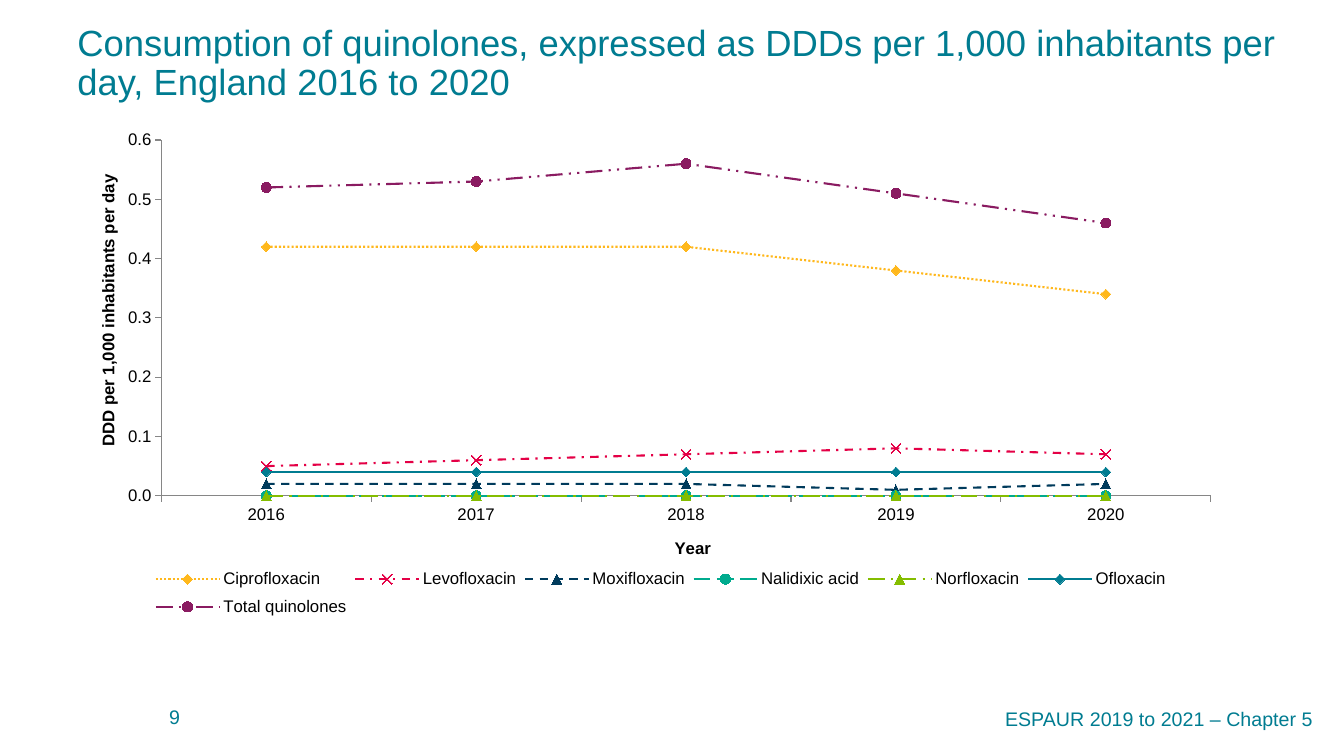
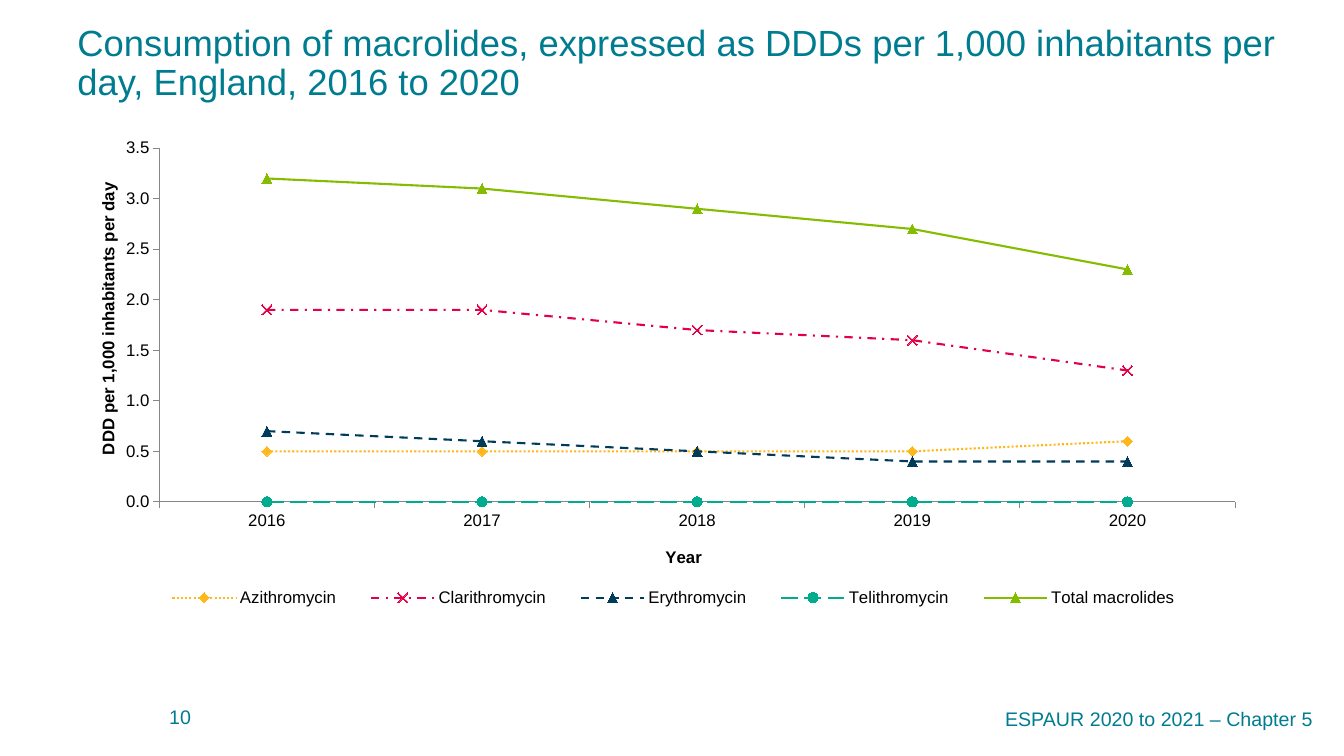
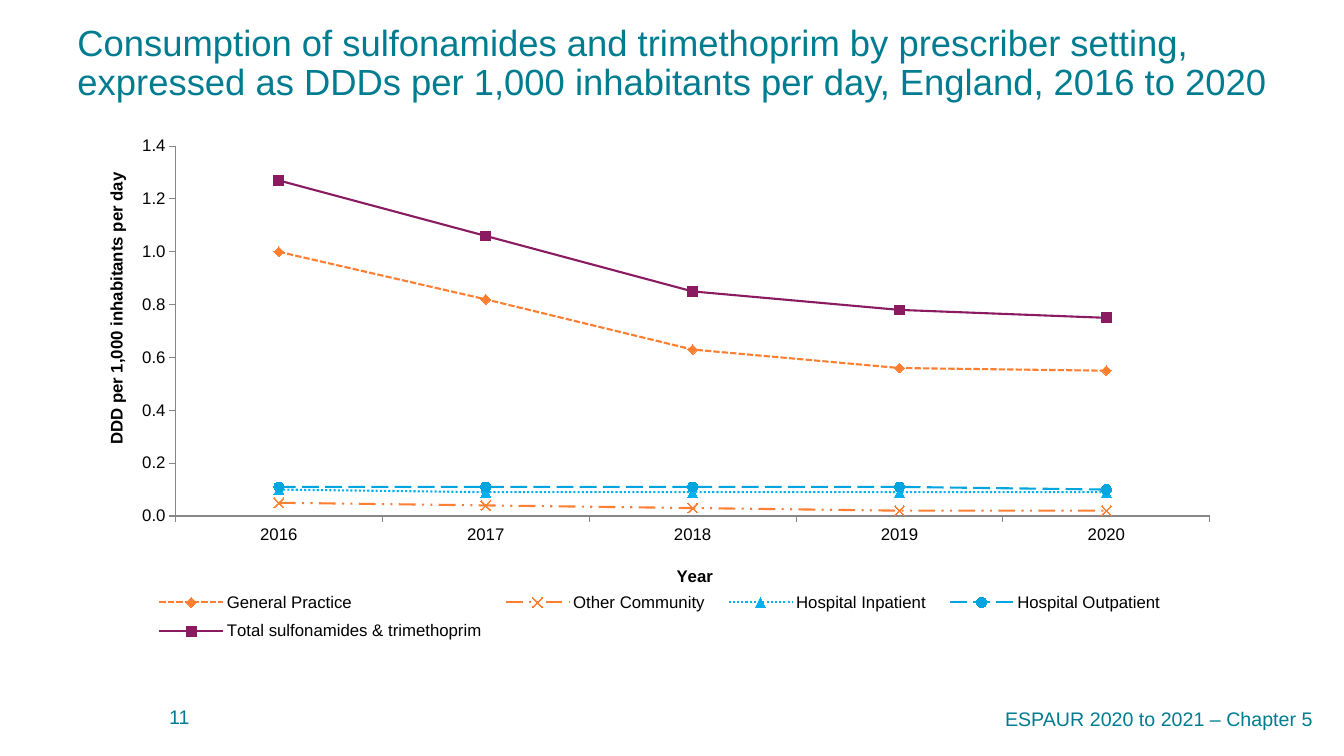
from dataclasses import dataclass

from lxml import etree
from pptx import Presentation
from pptx.chart.data import CategoryChartData
from pptx.dml.color import RGBColor
from pptx.enum.chart import XL_CHART_TYPE, XL_LEGEND_POSITION, XL_MARKER_STYLE, XL_TICK_MARK
from pptx.enum.dml import MSO_LINE
from pptx.enum.text import MSO_ANCHOR, PP_ALIGN
from pptx.oxml.ns import qn
from pptx.util import Pt

PX = 9144
LINE_MARKERS = XL_CHART_TYPE.LINE_MARKERS
BOTTOM = XL_LEGEND_POSITION.BOTTOM
TICK_OUT, TICK_NONE = XL_TICK_MARK.OUTSIDE, XL_TICK_MARK.NONE
TOP, MIDDLE = MSO_ANCHOR.TOP, MSO_ANCHOR.MIDDLE
LEFT, RIGHT = PP_ALIGN.LEFT, PP_ALIGN.RIGHT
DIAMOND, CROSS = XL_MARKER_STYLE.DIAMOND, XL_MARKER_STYLE.X
TRIANGLE, CIRCLE = XL_MARKER_STYLE.TRIANGLE, XL_MARKER_STYLE.CIRCLE
SQUARE = XL_MARKER_STYLE.SQUARE
SOLID, DOTS, SHORT_DASH = MSO_LINE.SOLID, MSO_LINE.ROUND_DOT, MSO_LINE.SQUARE_DOT
DASH, DASH_DOT = MSO_LINE.DASH, MSO_LINE.DASH_DOT
LONG_DASH, LONG_DASH_DOT = MSO_LINE.LONG_DASH, MSO_LINE.LONG_DASH_DOT
LONG_DASH_DOT_DOT = MSO_LINE.DASH_DOT_DOT


@dataclass(frozen=True)
class Theme:
    """Colours, font and sizes shared by the slides."""
    font: str = "Arial"
    teal: str = "007C91"
    black: str = "000000"
    axis: str = "868686"
    yellow: str = "FFB81C"
    red: str = "E40046"
    navy: str = "003B5C"
    green: str = "00AB8E"
    lime: str = "84BD00"
    plum: str = "8A1B61"
    orange: str = "FF7F32"
    sky: str = "00B0F0"
    blue: str = "00A5DF"
    title_size: int = 26
    footer_size: int = 14
    chart_size: int = 12
    series_width: float = 1.5
    axis_width: float = 0.75
    marker_size: int = 7


T = Theme()
YEARS = ["2016", "2017", "2018", "2019", "2020"]
TITLE_BOX = (67, 20, 1217, 106)
FOOTER_BOX = (14, 682, 1298, 62)
NUMBER_BOX = (89, 691, 1094, 40)
NUMBER_INDENT = 69

SLIDES = [
    dict(
        number=9,
        title="Consumption of quinolones, expressed as DDDs per 1,000 inhabitants per day, England 2016 to 2020",
        footer="ESPAUR 2019 to 2021 – Chapter 5",
        box=(89, 121, 1131, 506),
        plot=(71, 18, 1041, 353),
        legend=(57, 435, 1019, 65),
        year_at=(577, 410),
        ddd_at=(5, 49),
        scale=(0.6, 0.1),
        series=[
            ("Ciprofloxacin", (0.42, 0.42, 0.42, 0.38, 0.34), T.yellow, DOTS, DIAMOND),
            ("Levofloxacin", (0.05, 0.06, 0.07, 0.08, 0.07), T.red, DASH_DOT, CROSS),
            ("Moxifloxacin", (0.02, 0.02, 0.02, 0.01, 0.02), T.navy, DASH, TRIANGLE),
            ("Nalidixic acid", (0, 0, 0, 0, 0), T.green, LONG_DASH, CIRCLE),
            ("Norfloxacin", (0, 0, 0, 0, 0), T.lime, LONG_DASH_DOT, TRIANGLE),
            ("Ofloxacin", (0.04, 0.04, 0.04, 0.04, 0.04), T.teal, SOLID, DIAMOND),
            ("Total quinolones", (0.52, 0.53, 0.56, 0.51, 0.46), T.plum, LONG_DASH_DOT_DOT, CIRCLE),
        ],
    ),
    dict(
        number=10,
        title="Consumption of macrolides, expressed as DDDs per 1,000 inhabitants per day, England, 2016 to 2020",
        footer="ESPAUR 2020 to 2021 – Chapter 5",
        box=(89, 129, 1156, 503),
        plot=(69, 18, 1067, 351),
        legend=(53, 444, 1052, 40),
        year_at=(568, 410),
        ddd_at=(5, 49),
        scale=(3.5, 0.5),
        series=[
            ("Azithromycin", (0.5, 0.5, 0.5, 0.5, 0.6), T.yellow, DOTS, DIAMOND),
            ("Clarithromycin", (1.9, 1.9, 1.7, 1.6, 1.3), T.red, DASH_DOT, CROSS),
            ("Erythromycin", (0.7, 0.6, 0.5, 0.4, 0.4), T.navy, DASH, TRIANGLE),
            ("Telithromycin", (0, 0, 0, 0, 0), T.green, LONG_DASH, CIRCLE),
            ("Total macrolides", (3.2, 3.1, 2.9, 2.7, 2.3), T.lime, SOLID, TRIANGLE),
        ],
    ),
    dict(
        number=11,
        title="Consumption of sulfonamides and trimethoprim by prescriber setting, "
              "expressed as DDDs per 1,000 inhabitants per day, England, 2016 to 2020",
        footer="ESPAUR 2020 to 2021 – Chapter 5",
        box=(89, 127, 1130, 527),
        plot=(85, 18, 1026, 367),
        legend=(51, 451, 1029, 68),
        year_at=(579, 431),
        ddd_at=(13, 41),
        scale=(1.4, 0.2),
        series=[
            ("General Practice", (1, 0.82, 0.63, 0.56, 0.55), T.orange, SHORT_DASH, DIAMOND),
            ("Other Community", (0.05, 0.04, 0.03, 0.02, 0.02), T.orange, LONG_DASH_DOT_DOT, CROSS),
            ("Hospital Inpatient", (0.1, 0.09, 0.09, 0.09, 0.09), T.sky, DOTS, TRIANGLE),
            ("Hospital Outpatient", (0.11, 0.11, 0.11, 0.11, 0.1), T.blue, LONG_DASH, CIRCLE),
            ("Total sulfonamides & trimethoprim", (1.27, 1.06, 0.85, 0.78, 0.75), T.plum, SOLID, SQUARE),
        ],
    ),
]


def emu(box):
    """Turn a box in px into EMU."""
    return [v * PX for v in box]


def set_font(font, size, color, bold=False):
    """Apply the theme font with a size and colour."""
    font.name, font.size, font.bold = T.font, Pt(size), bold
    font.color.rgb = RGBColor.from_string(color)


def add_text(slide, box, text, size, anchor=MIDDLE, align=LEFT):
    """Add a one-paragraph teal text box and return its paragraph."""
    tf = slide.shapes.add_textbox(*emu(box)).text_frame
    tf.word_wrap = True
    tf.vertical_anchor = anchor
    tf.text = text
    p = tf.paragraphs[0]
    p.alignment = align
    set_font(p.runs[0].font, size, T.teal)
    return p


def add_title(slide, box, text):
    """Add the slide title."""
    p = add_text(slide, box, text, T.title_size, anchor=TOP)
    p.line_spacing = 0.9


def add_footer(slide, footer_box, number_box, text, number):
    """Add the report name at the right and the slide number at the left."""
    add_text(slide, footer_box, text, T.footer_size, align=RIGHT)
    p = add_text(slide, number_box, str(number), T.footer_size)
    p._p.get_or_add_pPr().set("marL", str(NUMBER_INDENT * PX))


def set_layout(el, index, box, part, inner=False):
    """Fix a chart part at a px place relative to the chart box."""
    for old in el.findall(qn("c:layout")):
        el.remove(old)
    layout = etree.Element(qn("c:layout"))
    manual = etree.SubElement(layout, qn("c:manualLayout"))
    settings = [("layoutTarget", "inner")] if inner else []
    settings += [("xMode", "edge"), ("yMode", "edge")]
    settings += [(k, str(v / box[2 + i % 2])) for i, (k, v) in enumerate(zip("xywh", part))]
    for tag, value in settings:
        etree.SubElement(manual, qn("c:" + tag)).set("val", value)
    el.insert(index, layout)


def style_axis(axis, title, box, title_at):
    """Style an axis and place its bold title."""
    axis.has_major_gridlines = False
    axis.major_tick_mark, axis.minor_tick_mark = TICK_OUT, TICK_NONE
    axis.format.line.color.rgb = RGBColor.from_string(T.axis)
    axis.format.line.width = Pt(T.axis_width)
    tf = axis.axis_title.text_frame
    tf.text = title
    set_font(tf.paragraphs[0].runs[0].font, T.chart_size, T.black, bold=True)
    set_layout(axis.axis_title._element, 1, box, title_at)


def style_series(series, color, dash, marker):
    """Style one line and its markers."""
    rgb = RGBColor.from_string(color)
    series.smooth = False
    line = series.format.line
    line.color.rgb, line.width, line.dash_style = rgb, Pt(T.series_width), dash
    series.marker.style, series.marker.size = marker, T.marker_size
    fmt = series.marker.format
    fmt.line.color.rgb = rgb
    if marker == CROSS:
        fmt.fill.background()
    else:
        fmt.fill.solid()
        fmt.fill.fore_color.rgb = rgb


def add_line_chart(slide, box, plot, legend, year_at, ddd_at, scale, series):
    """Add a yearly consumption chart in the given box."""
    data = CategoryChartData(number_format="0.00")
    data.categories = YEARS
    for name, values, *_ in series:
        data.add_series(name, values)
    chart = slide.shapes.add_chart(LINE_MARKERS, *emu(box), data).chart
    chart.has_title = False
    set_font(chart.font, T.chart_size, T.black)
    chart.plots[0].vary_by_categories = False
    for s, (_, _, *style) in zip(chart.plots[0].series, series):
        style_series(s, *style)

    style_axis(chart.category_axis, "Year", box, year_at)
    axis = chart.value_axis
    style_axis(axis, "DDD per 1,000 inhabitants per day", box, ddd_at)
    axis.minimum_scale = 0
    axis.maximum_scale, axis.major_unit = scale
    axis.tick_labels.number_format = "0.0"
    axis.tick_labels.number_format_is_linked = False

    chart.has_legend = True
    chart.legend.position = BOTTOM
    chart.legend.include_in_layout = False
    set_font(chart.legend.font, T.chart_size, T.black)
    set_layout(chart.legend._element, 1, box, legend)
    plot_area = chart._chartSpace.chart.plotArea
    set_layout(plot_area, 0, box, plot, inner=True)


def add_chart_slide(prs, title, footer, number, **chart):
    """Add one slide with a chart, footer and title."""
    slide = prs.slides.add_slide(prs.slide_layouts[6])
    add_line_chart(slide, **chart)
    add_footer(slide, FOOTER_BOX, NUMBER_BOX, footer, number)
    add_title(slide, TITLE_BOX, title)


def main():
    """Build and save the presentation."""
    prs = Presentation()
    prs.slide_width, prs.slide_height = emu((1333, 750))
    for content in SLIDES:
        add_chart_slide(prs, **content)
    prs.save("out.pptx")


if __name__ == "__main__":
    main()
